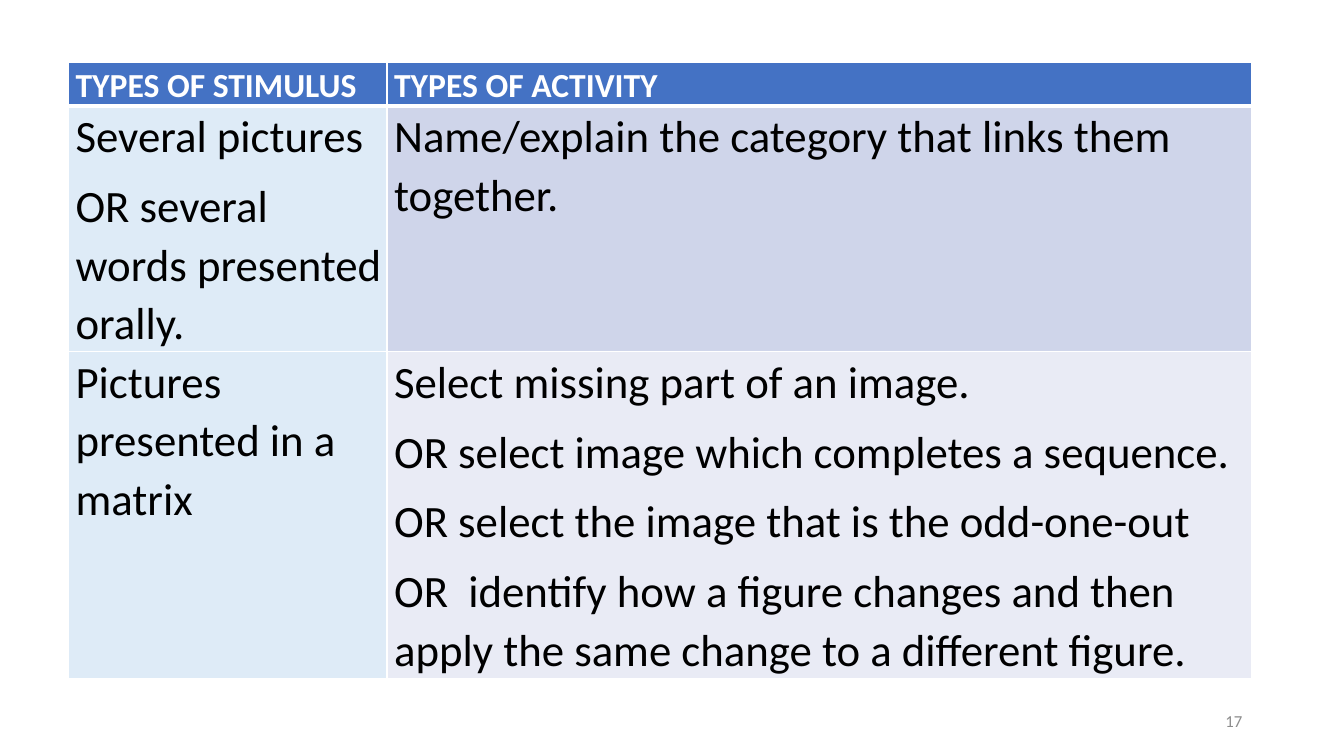
import pptx
import pptx.dml.color
import pptx.enum.text
import pptx.oxml.ns
import pptx.util
from lxml import etree

COLORS = {
    "header": "4472C4",
    "stimulus": "DEEBF7",
    "activity_dark": "CFD5EA",
    "activity_light": "E9EBF5",
    "white": "FFFFFF",
    "black": "000000",
    "gray": "8C8C8C",
}

TABLE_COLUMNS = [9.48, 25.72]
TABLE_ROWS = [
    (1.38, [
        ("header", ["TYPES OF STIMULUS"]),
        ("header", ["TYPES OF ACTIVITY"]),
    ]),
    (7.78, [
        ("stimulus", ["Several pictures", "OR several words presented orally."]),
        ("activity_dark", ["Name/explain the category that links them together."]),
    ]),
    (10.37, [
        ("stimulus", ["Pictures presented in a matrix"]),
        ("activity_light", [
            "Select missing part of an image.",
            "OR select image which completes a sequence.",
            "OR select the image that is the odd-one-out",
            "OR  identify how a figure changes and then apply the same change to a different figure.",
        ]),
    ]),
]


class SlideBuilder:
    font_name = "Calibri"
    grid_columns = 40
    grid_rows = 24

    def __init__(self, deck):
        self.deck = deck
        self.page = deck.slides.add_slide(deck.slide_layouts[6])

    def across(self, columns):
        return round(self.deck.slide_width * columns / self.grid_columns)

    def down(self, rows):
        return round(self.deck.slide_height * rows / self.grid_rows)

    def color(self, name):
        return pptx.dml.color.RGBColor.from_string(COLORS[name])

    def style_font(self, paragraph, size, color, bold=False):
        font = paragraph.font
        font.name = self.font_name
        font.size = pptx.util.Pt(size)
        font.bold = bold
        font.color.rgb = self.color(color)

    def border(self, cell, side, width):
        properties = cell._tc.get_or_add_tcPr()
        tag = pptx.oxml.ns.qn
        line = etree.SubElement(properties, tag(f"a:ln{side}"), w=str(pptx.util.Pt(width)))
        fill = etree.SubElement(line, tag("a:solidFill"))
        etree.SubElement(fill, tag("a:srgbClr"), val=COLORS["white"])

    def cell(self, cell, fill, lines, is_header):
        cell.margin_left = pptx.util.Inches(0.07)
        cell.margin_right = pptx.util.Inches(0.05)
        cell.margin_top = cell.margin_bottom = 0
        widths = {"L": 1, "R": 1, "T": 1, "B": 3 if is_header else 1}
        for side, width in widths.items():
            self.border(cell, side, width)
        cell.fill.solid()
        cell.fill.fore_color.rgb = self.color(fill)
        cell.text = "\n".join(lines)
        for paragraph in cell.text_frame.paragraphs:
            paragraph.line_spacing = 1.07
            paragraph.space_after = pptx.util.Pt(8)
            if is_header:
                self.style_font(paragraph, 24, "white", bold=True)
            else:
                self.style_font(paragraph, 32, "black")

    def table(self, left, top, columns, rows):
        table = self.page.shapes.add_table(
            len(rows), len(columns),
            self.across(left), self.down(top),
            self.across(sum(columns)), self.down(sum(height for height, _ in rows)),
        ).table
        for column, width in zip(table.columns, columns):
            column.width = self.across(width)
        for row_index, (height, cells) in enumerate(rows):
            table.rows[row_index].height = self.down(height)
            for column_index, (fill, lines) in enumerate(cells):
                self.cell(table.cell(row_index, column_index), fill, lines, row_index == 0)

    def page_number(self, text, left, top, width, height):
        box = self.page.shapes.add_textbox(
            self.across(left), self.down(top), self.across(width), self.down(height))
        frame = box.text_frame
        frame.word_wrap = True
        frame.vertical_anchor = pptx.enum.text.MSO_ANCHOR.MIDDLE
        frame.text = text
        paragraph = frame.paragraphs[0]
        paragraph.alignment = pptx.enum.text.PP_ALIGN.RIGHT
        self.style_font(paragraph, 12, "gray")


def main():
    deck = pptx.Presentation()
    deck.slide_width = pptx.util.Inches(13.33)
    deck.slide_height = pptx.util.Inches(7.5)
    builder = SlideBuilder(deck)
    builder.table(2.04, 1.98, TABLE_COLUMNS, TABLE_ROWS)
    builder.page_number("17", 28.27, 22.24, 9, 1.28)
    deck.save("out.pptx")


if __name__ == "__main__":
    main()
